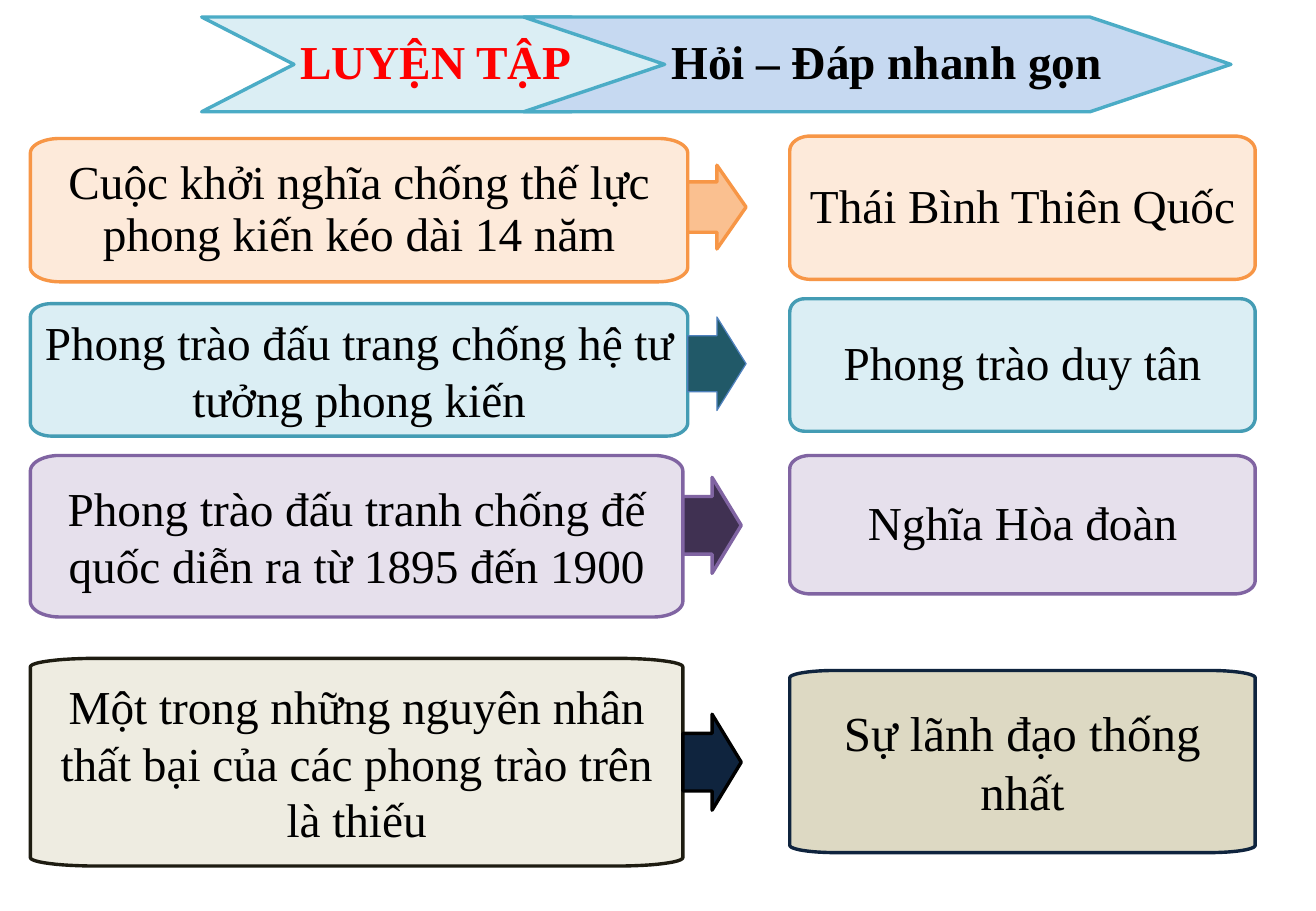
from math import cos, pi, sin

from pptx import Presentation
from pptx.dml.color import RGBColor
from pptx.enum.shapes import MSO_SHAPE
from pptx.enum.text import MSO_ANCHOR, PP_ALIGN
from pptx.util import Inches, Pt

RIGHT_ARROW = MSO_SHAPE.RIGHT_ARROW
MIDDLE = MSO_ANCHOR.MIDDLE
CENTER = PP_ALIGN.CENTER
FONT = "Times New Roman"
LEFT, ANSWER_LEFT, ANSWER_WIDTH, ARROW_WIDTH = 0.25, 6.5, 3.83, 0.48
ARC_STEPS = 12

COLORS = {
    "black": "000000", "red": "FF0000", "header_line": "4BACC6",
    "sky": "DBEEF4", "blue": "C6D9F1", "steel": "4F81BD",
    "peach": "FDEADA", "apricot": "FAC090", "orange": "F79646",
    "teal": "449CB4", "dark_teal": "215968",
    "lilac": "E6E0EC", "purple": "8064A2", "plum": "403152",
    "cream": "EEECE1", "tan": "DDD9C3", "bark": "1E1C11", "navy": "0F243E",
}

# Each box: top, height, (corner radii), fill, line, inset, size, spaced, text.
# Each arrow: top, height, fill, line, line width.
ROWS = [
    (5.41,
     (1.14, 1.18, (0.24, 0.12), "peach", "orange", 0.1, 28, False,
      "Cuộc khởi nghĩa chống thế lực phong kiến kéo dài 14 năm"),
     (1.36, 0.69, "apricot", "orange", 2),
     (1.12, 1.18, (0.17, 0.12), "peach", "orange", 0.1, 28, False,
      "Thái Bình Thiên Quốc")),
    (5.41,
     (2.5, 1.09, (0.17, 0.11), "sky", "teal", 0.09, 28, True,
      "Phong trào đấu trang chống hệ tư tưởng phong kiến"),
     (2.61, 0.77, "dark_teal", "steel", 0.75),
     (2.46, 1.09, (0.12, 0.11), "sky", "teal", 0.09, 28, False,
      "Phong trào duy tân")),
    (5.37,
     (3.75, 1.33, (0.24, 0.13), "lilac", "purple", 0.1, 28, True,
      "Phong trào đấu tranh chống đế quốc diễn ra từ 1895 đến 1900"),
     (3.93, 0.79, "plum", "purple", 2),
     (3.75, 1.14, (0.17, 0.11), "lilac", "purple", 0.1, 28, False,
      "Nghĩa Hòa đoàn")),
    (5.37,
     (5.42, 1.71, (0.54, 0.07), "cream", "bark", 0.17, 28, True,
      "Một trong những nguyên nhân thất bại của các phong trào trên là thiếu"),
     (5.88, 0.79, "navy", "black", 2),
     (5.52, 1.5, (0.38, 0.06), "tan", "navy", 0.17, 29, True,
      "Sự lãnh đạo thống nhất")),
]


def rgb(name):
    """Look up a named colour."""
    return RGBColor.from_string(COLORS[name])


def paint(sp, fill, line, width=2):
    """Give a shape its fill and outline."""
    sp.shadow.inherit = False
    sp.fill.solid()
    sp.fill.fore_color.rgb = rgb(fill)
    sp.line.color.rgb = rgb(line)
    sp.line.width = Pt(width)


def outline(slide, points, fill, line):
    """Draw a closed outline through points given in inches."""
    points = [(Inches(x), Inches(y)) for x, y in points]
    builder = slide.shapes.build_freeform(*points[0])
    builder.add_line_segments(points[1:], close=True)
    sp = builder.convert_to_shape()
    paint(sp, fill, line)
    return sp


def write(sp, text, insets, size=28, color="black", bold=False, spaced=False):
    """Set centred text with insets in left, top, right, bottom order."""
    tf = sp.text_frame
    tf.word_wrap = True
    tf.vertical_anchor = MIDDLE
    (tf.margin_left, tf.margin_top,
     tf.margin_right, tf.margin_bottom) = map(Inches, insets)
    p = tf.paragraphs[0]
    p.text = text
    p.alignment = CENTER
    if spaced:
        p.space_before = p.space_after = Pt(6)
    else:
        p.line_spacing = 0.9
    p.font.name = FONT
    p.font.size = Pt(size)
    p.font.bold = bold
    p.font.color.rgb = rgb(color)


def add_chevron(slide, box, notch, fill, text, color, left_inset):
    """Draw one header chevron with its title."""
    x, y, w, h = box
    points = [(x, y), (x + w - notch, y), (x + w, y + h / 2),
              (x + w - notch, y + h), (x, y + h), (x + notch, y + h / 2)]
    sp = outline(slide, points, fill, "header_line")
    write(sp, text, (left_inset, 0.02, 0.44, 0.02), color=color, bold=True)


def add_card(slide, x, w, card):
    """Draw a card with elliptical corners and its text."""
    y, h, (rx, ry), fill, line, inset, size, spaced, text = card
    centers = [(x + w - rx, y + h - ry), (x + rx, y + h - ry),
               (x + rx, y + ry), (x + w - rx, y + ry)]
    points = []
    for quarter, (cx, cy) in enumerate(centers):
        for step in range(ARC_STEPS + 1):
            angle = (quarter + step / ARC_STEPS) * pi / 2
            points.append((cx + rx * cos(angle), cy + ry * sin(angle)))
    sp = outline(slide, points, fill, line)
    write(sp, text, (inset,) * 4, size=size, spaced=spaced)


def add_arrow(slide, x, arrow):
    """Draw the arrow leading from a question to its answer."""
    y, h, fill, line, width = arrow
    sp = slide.shapes.add_shape(
        RIGHT_ARROW, Inches(x), Inches(y), Inches(ARROW_WIDTH), Inches(h))
    sp.adjustments[0] = 0.6
    sp.adjustments[1] = 0.5
    paint(sp, fill, line, width)


def add_row(slide, question_width, question, arrow, answer):
    """Draw a question, its arrow and its answer."""
    add_card(slide, LEFT, question_width, question)
    add_arrow(slide, LEFT + question_width, arrow)
    add_card(slide, ANSWER_LEFT, ANSWER_WIDTH, answer)


def main():
    """Build and save the quiz slide."""
    prs = Presentation()
    prs.slide_width, prs.slide_height = Inches(10.83), Inches(7.5)
    slide = prs.slides.add_slide(prs.slide_layouts[6])
    add_chevron(slide, (1.66, 0.14, 3.8, 0.78), 0.76, "sky",
                "LUYỆN TẬP", "red", 0.49)
    add_chevron(slide, (4.31, 0.14, 5.82, 0.78), 1.16, "blue",
                "Hỏi – Đáp nhanh gọn", "black", 0.59)
    for row in ROWS:
        add_row(slide, *row)
    prs.save("out.pptx")


if __name__ == "__main__":
    main()
